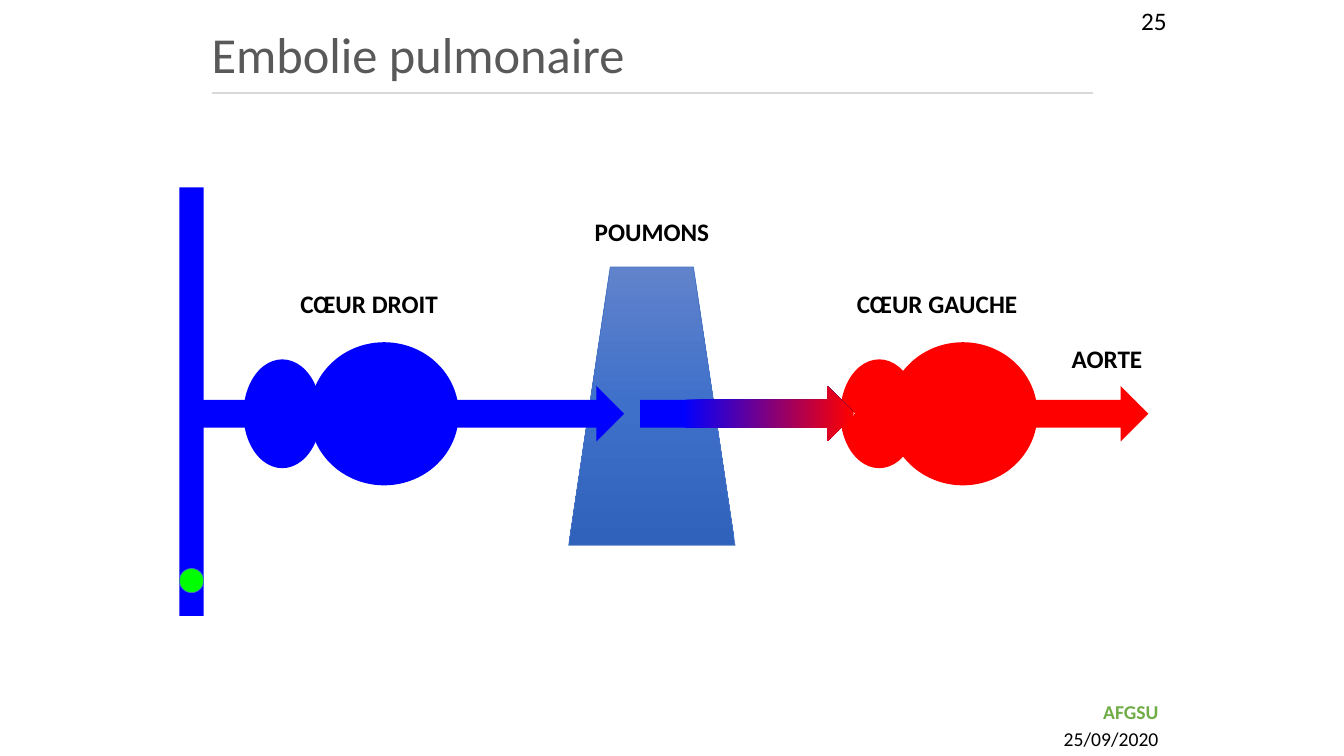
from dataclasses import dataclass

from lxml import etree
from pptx import Presentation
from pptx import util as u
from pptx.dml.color import RGBColor
from pptx.enum import shapes, text
from pptx.oxml.ns import qn


@dataclass(frozen=True)
class Theme:
    font: str = "Calibri"
    title_size: int = 36
    label_size: int = 18
    footer_size: int = 14
    title: str = "595959"
    rule: str = "D9D9D9"
    ink: str = "000000"
    accent: str = "70AD47"
    venous: str = "0000FF"
    arterial: str = "FF0000"
    clot: str = "00FF00"
    outline: str = "4472C4"
    lungs: tuple = ((0, "6183CB"), (50, "3E70CA"), (100, "3062BB"))
    oxygenation: tuple = ((20, "0000FF"), (99, "FF0000"), (100, "FFFFFF"))


THEME = Theme()
WIDTH, HEIGHT = u.Inches(13.33), u.Inches(7.5)
CELL = HEIGHT / 75  # square grid: 75 rows
AXIS = 41.05  # row of the blood flow
ARROW_ROWS = 5.5
SHAPE = shapes.MSO_SHAPE


def grid(*cells):
    return [u.Emu(round(cell * CELL)) for cell in cells]


def color(value):
    return RGBColor.from_string(value)


def add_text(slide, box, lines, size, align=text.PP_ALIGN.LEFT,
             anchor=text.MSO_ANCHOR.TOP, wrap=True):
    """Each line is (wording, colour, bold)."""
    frame = slide.shapes.add_textbox(*grid(*box)).text_frame
    frame.word_wrap = wrap
    frame.vertical_anchor = anchor
    for index, (wording, ink, bold) in enumerate(lines):
        paragraph = frame.paragraphs[0] if index == 0 else frame.add_paragraph()
        paragraph.text = wording
        paragraph.alignment = align
        if index:
            paragraph.space_before = u.Pt(size * 0.2)
        font = paragraph.runs[0].font
        font.name, font.size, font.bold = THEME.font, u.Pt(size), bold
        font.color.rgb = color(ink)
    return frame


def add_label(slide, wording, left, top, width):
    add_text(slide, (left, top, width, 4), [(wording, THEME.ink, True)],
             THEME.label_size, wrap=False)


def add_figure(slide, kind, box, fill, outline=None):
    shape = slide.shapes.add_shape(kind, *grid(*box))
    shape.shadow.inherit = False
    shape.fill.solid()
    shape.fill.fore_color.rgb = color(fill)
    if outline:
        shape.line.color.rgb = color(outline)
        shape.line.width = u.Pt(0.5)
    else:
        shape.line.fill.background()
    return shape


def set_gradient(shape, stops, angle):
    shape.fill.gradient()
    shape.fill.gradient_angle = angle
    stop_list = next(shape._element.iter(qn("a:gsLst")))
    for stop in list(stop_list):
        stop_list.remove(stop)
    for position, value in stops:
        stop = etree.SubElement(stop_list, qn("a:gs"), pos=str(position * 1000))
        etree.SubElement(stop, qn("a:srgbClr"), val=value)


def add_flow_arrow(slide, left, width, fill):
    box = (left, AXIS - ARROW_ROWS / 2, width, ARROW_ROWS)
    return add_figure(slide, SHAPE.RIGHT_ARROW, box, fill)


def add_heart(slide, atrium_center, ventricle_center, fill):
    for center, width, height in ((atrium_center, 7.7, 10.8),
                                  (ventricle_center, 14.8, 14.2)):
        box = (center - width / 2, AXIS - height / 2, width, height)
        add_figure(slide, SHAPE.OVAL, box, fill)


def add_heading(slide):
    add_text(slide, (20, 1.3, 90, 8.7),
             [("Embolie pulmonaire", THEME.title, False)], THEME.title_size,
             anchor=text.MSO_ANCHOR.MIDDLE).paragraphs[0].line_spacing = 0.9
    rule = slide.shapes.add_connector(shapes.MSO_CONNECTOR.STRAIGHT,
                                      *grid(21, 9.2, 108.4, 9.2))
    rule.line.color.rgb = color(THEME.rule)
    rule.line.width = u.Pt(1.5)
    etree.SubElement(rule._element.spPr, qn("a:effectLst"))
    add_text(slide, (105.3, 0, 11.4, 3.6), [("25", THEME.ink, False)],
             THEME.label_size, text.PP_ALIGN.RIGHT)


def add_circulation(slide):
    # Hearts and lungs
    add_heart(slide, 87.2, 95.5, THEME.arterial)
    add_heart(slide, 28, 38.1, THEME.venous)
    lungs = add_figure(slide, SHAPE.TRAPEZOID, (56.4, 26.5, 16.5, 27.6),
                       THEME.outline, THEME.outline)
    set_gradient(lungs, THEME.lungs, 270)

    # Blood flow
    add_flow_arrow(slide, 43.8, 18.1, THEME.venous)
    oxygenation = add_flow_arrow(slide, 63.5, 21.3, THEME.venous)
    set_gradient(oxygenation, THEME.oxygenation, 0)
    add_flow_arrow(slide, 101.3, 12.6, THEME.arterial)
    add_flow_arrow(slide, 17.9, 18.1, THEME.venous)

    # Vein with its clot
    add_figure(slide, SHAPE.RECTANGLE, (17.8, 18.6, 2.4, 42.5), THEME.venous)
    add_figure(slide, SHAPE.OVAL, (17.8, 56.4, 2.4, 2.4), THEME.clot,
               THEME.outline)


def main():
    presentation = Presentation()
    presentation.slide_width, presentation.slide_height = WIDTH, HEIGHT
    slide = presentation.slides.add_slide(presentation.slide_layouts[6])

    add_heading(slide)
    add_circulation(slide)

    # Labels
    for label in (("CŒUR DROIT", 28.8, 28.1, 15.8),
                  ("CŒUR GAUCHE", 84, 28.1, 18.1),
                  ("POUMONS", 58, 21, 13.5),
                  ("AORTE", 105.3, 33.6, 9.2)):
        add_label(slide, *label)

    # Footer
    add_text(slide, (101.3, 68.9, 14.6, 5.6),
             [("AFGSU", THEME.accent, True), ("25/09/2020", THEME.ink, False)],
             THEME.footer_size, text.PP_ALIGN.RIGHT)

    presentation.save("out.pptx")


if __name__ == "__main__":
    main()
